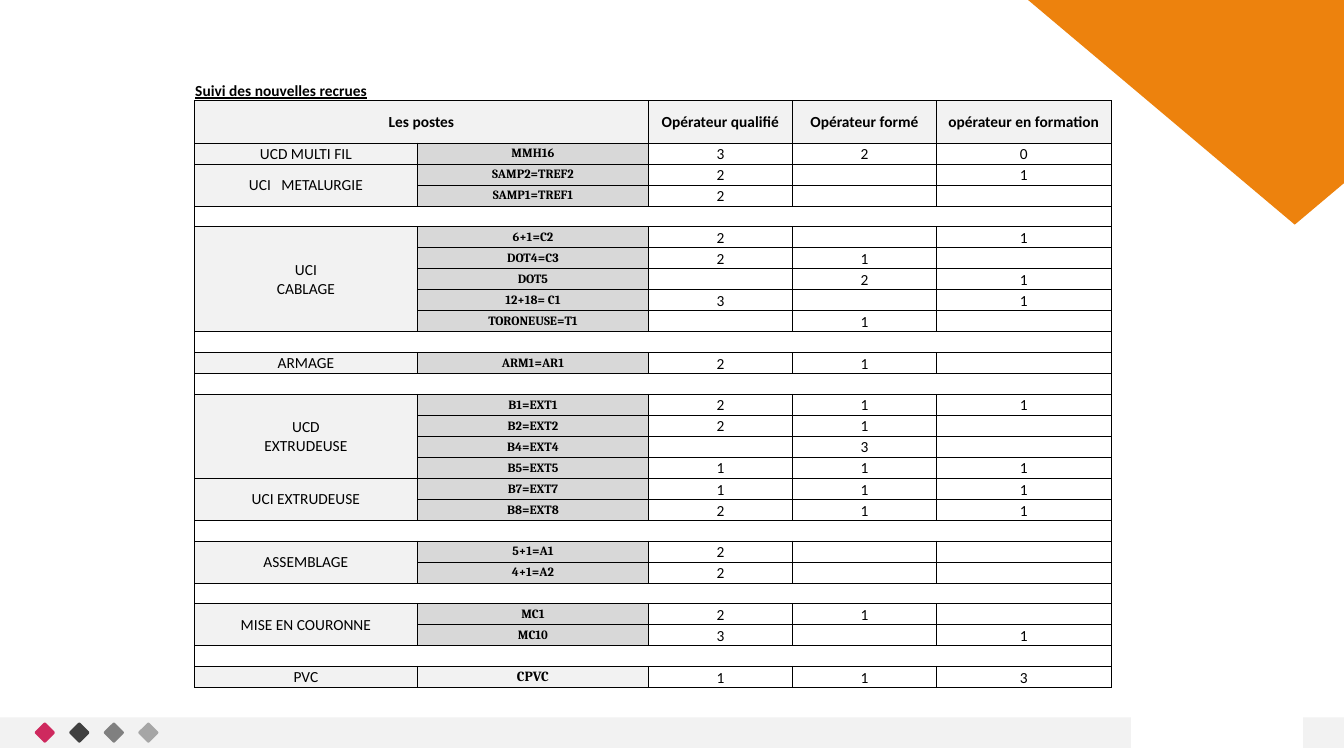
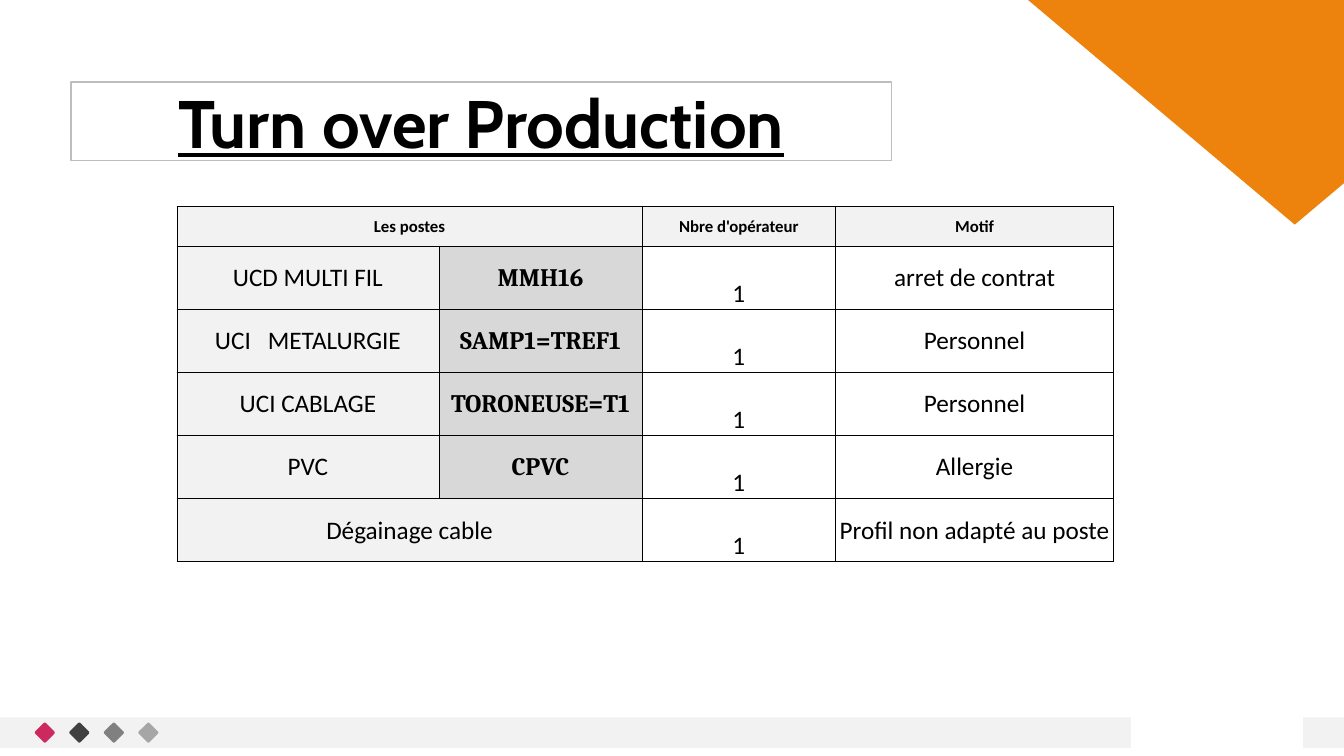
from dataclasses import dataclass, replace

from lxml import etree
from pptx import Presentation
from pptx.dml.color import RGBColor
from pptx.enum.shapes import MSO_SHAPE
from pptx.enum.text import MSO_ANCHOR, MSO_AUTO_SIZE, PP_ALIGN
from pptx.oxml.ns import qn
from pptx.util import Cm, Pt

RECTANGLE, ROUNDED, DIAMOND = MSO_SHAPE.RECTANGLE, MSO_SHAPE.ROUNDED_RECTANGLE, MSO_SHAPE.DIAMOND
LEFT, CENTER = PP_ALIGN.LEFT, PP_ALIGN.CENTER
MIDDLE, BOTTOM = MSO_ANCHOR.MIDDLE, MSO_ANCHOR.BOTTOM
NO_STYLE_NO_GRID = "{2D5ABB26-0587-4C30-8999-92F81FD0307C}"

RECRUITS_TITLE = "Suivi des nouvelles recrues"
RECRUITS_HEADER = ["Opérateur qualifié", "Opérateur formé", "opérateur en formation"]
POSTS_LABEL = "Les postes"
RECRUIT_BLOCKS = [
    [("UCD MULTI FIL", [("MMH16", "3", "2", "0")]),
     ("UCI   METALURGIE", [("SAMP2=TREF2", "2", "", "1"), ("SAMP1=TREF1", "2", "", "")])],
    [("UCI\nCABLAGE", [("6+1=C2", "2", "", "1"), ("DOT4=C3", "2", "1", ""),
                       ("DOT5", "", "2", "1"), ("12+18= C1", "3", "", "1"),
                       ("TORONEUSE=T1", "", "1", "")])],
    [("ARMAGE", [("ARM1=AR1", "2", "1", "")])],
    [("UCD\nEXTRUDEUSE", [("B1=EXT1", "2", "1", "1"), ("B2=EXT2", "2", "1", ""),
                          ("B4=EXT4", "", "3", ""), ("B5=EXT5", "1", "1", "1")]),
     ("UCI EXTRUDEUSE", [("B7=EXT7", "1", "1", "1"), ("B8=EXT8", "2", "1", "1")])],
    [("ASSEMBLAGE", [("5+1=A1", "2", "", ""), ("4+1=A2", "2", "", "")])],
    [("MISE EN COURONNE", [("MC1", "2", "1", ""), ("MC10", "3", "", "1")])],
    [("PVC", [("CPVC", "1", "1", "3")])],
]
LIGHT_POST = "CPVC"

TURNOVER_TITLE = "Turn over Production"
TURNOVER_HEADER = [POSTS_LABEL, "", "Nbre d'opérateur", "Motif"]
DEPARTURES = [
    ("UCD MULTI FIL", "MMH16", "1", "arret de contrat"),
    ("UCI   METALURGIE", "SAMP1=TREF1", "1", "Personnel"),
    ("UCI CABLAGE", "TORONEUSE=T1", "1", "Personnel"),
    ("PVC", "CPVC", "1", "Allergie"),
    ("Dégainage cable", "", "1", "Profil non adapté au poste"),
]


@dataclass(frozen=True)
class Theme:
    text: str = "000000"
    accent: str = "ED820D"
    band: str = "F2F2F2"
    post: str = "D8D8D8"
    frame: str = "BDBDBD"
    markers: tuple = ("CE295E", "404040", "808080", "A6A6A6")
    title_font: str = "Cabin"
    body_font: str = "Calibri"
    post_font: str = "Cambria"
    title_size: int = 48
    header_size: int = 12
    large_size: int = 18
    body_size: int = 11
    light_post_size: int = 10
    post_size: int = 9
    border_width: float = 0.5


THEME = Theme()


@dataclass(frozen=True)
class CellStyle:
    fill: str = ""
    font: str = THEME.body_font
    size: int = THEME.body_size
    bold: bool = False
    underline: bool = False
    align: int = CENTER
    anchor: int = MIDDLE


CAPTION = CellStyle(bold=True, underline=True, align=LEFT, anchor=BOTTOM)
UNIT = CellStyle(fill=THEME.band)
HEADER = replace(UNIT, bold=True)
POST = CellStyle(fill=THEME.post, font=THEME.post_font, size=THEME.post_size, bold=True)
COUNT = CellStyle(anchor=BOTTOM)
REASON = CellStyle(size=THEME.large_size)


def rgb(value):
    return RGBColor.from_string(value)


def format_text(paragraph, font, size, bold, underline, align):
    paragraph.alignment = align
    paragraph.font.name = font
    paragraph.font.size = Pt(size)
    paragraph.font.bold = bold
    paragraph.font.underline = underline
    paragraph.font.color.rgb = rgb(THEME.text)


def add_solid(slide, kind, left, top, width, height, color):
    shape = slide.shapes.add_shape(kind, Cm(left), Cm(top), Cm(width), Cm(height))
    shape.shadow.inherit = False
    shape.fill.solid()
    shape.fill.fore_color.rgb = rgb(color)
    shape.line.fill.background()
    return shape


def add_decor(slide):
    for left, width in ((0, 28.5), (32.84, 1.03)):
        add_solid(slide, RECTANGLE, left, 18.08, width, 0.77, THEME.band)
    for index, color in enumerate(THEME.markers):
        marker = add_solid(slide, ROUNDED, 0.94 + 0.87 * index, 18.27, 0.38, 0.38, color)
        marker.adjustments[0] = 0.11
        marker.rotation = 315
    add_solid(slide, DIAMOND, 25.91, -5.66, 13.44, 11.32, THEME.accent)


def draw_borders(cell):
    properties = cell._tc.get_or_add_tcPr()
    for side in ("a:lnL", "a:lnR", "a:lnT", "a:lnB"):
        line = etree.SubElement(properties, qn(side), w=str(Pt(THEME.border_width)))
        solid = etree.SubElement(line, qn("a:solidFill"))
        etree.SubElement(solid, qn("a:srgbClr"), val=THEME.text)


def write_cell(cell, text, style):
    cell.margin_left = cell.margin_right = cell.margin_top = Cm(0.02)
    cell.margin_bottom = 0
    cell.vertical_anchor = style.anchor
    if style.fill:
        cell.fill.solid()
        cell.fill.fore_color.rgb = rgb(style.fill)
    else:
        cell.fill.background()
    paragraph = cell.text_frame.paragraphs[0]
    paragraph.text = text
    format_text(paragraph, style.font, style.size, style.bold, style.underline, style.align)
    if not text:
        etree.SubElement(paragraph._p, qn("a:endParaRPr"), sz=str(style.size * 100))


def add_grid(slide, left, top, widths, heights, rows, merges, open_rows=()):
    table = slide.shapes.add_table(
        len(rows), len(widths), Cm(left), Cm(top), Cm(sum(widths)), Cm(sum(heights))).table
    table.first_row = table.horz_banding = False
    table._tbl.tblPr.find(qn("a:tableStyleId")).text = NO_STYLE_NO_GRID
    for column, width in zip(table.columns, widths):
        column.width = Cm(width)
    for row_index, (height, row) in enumerate(zip(heights, rows)):
        table.rows[row_index].height = Cm(height)
        for column_index, (text, style) in enumerate(row):
            cell = table.cell(row_index, column_index)
            if row_index not in open_rows:
                draw_borders(cell)
            write_cell(cell, text, style)
    for first, last in merges:
        table.cell(*first).merge(table.cell(*last))


def build_recruits(slide):
    line_height, spacer_height, header_height = 0.53, 0.52, 1.06
    rows = [
        [(RECRUITS_TITLE, CAPTION)] + [("", COUNT)] * 4,
        [(label, HEADER) for label in [POSTS_LABEL, "", *RECRUITS_HEADER]],
    ]
    heights = [line_height, header_height]
    merges = [((0, 0), (0, 1)), ((1, 0), (1, 1))]
    light_post = replace(POST, fill=THEME.band, size=THEME.light_post_size)
    for block_index, block in enumerate(RECRUIT_BLOCKS):
        if block_index:
            merges.append(((len(rows), 0), (len(rows), 4)))
            rows.append([("", COUNT)] * 5)
            heights.append(spacer_height)
        for unit, posts in block:
            first = len(rows)
            for index, (post, *counts) in enumerate(posts):
                post_style = light_post if post == LIGHT_POST else POST
                rows.append([("" if index else unit, UNIT), (post, post_style)]
                            + [(count, COUNT) for count in counts])
                heights.append(line_height)
            if len(posts) > 1:
                merges.append(((first, 0), (len(rows) - 1, 0)))
    add_grid(slide, 4.9, 2.01, [5.62, 5.82, 3.63, 3.63, 4.4], heights, rows, merges, open_rows=(0,))


def build_turnover(slide):
    title = slide.shapes.title
    title.left, title.top, title.width, title.height = Cm(1.79), Cm(2.07), Cm(20.67), Cm(1.98)
    title.line.color.rgb = rgb(THEME.frame)
    title.line.width = Pt(1)
    frame = title.text_frame
    frame.text = TURNOVER_TITLE
    frame.word_wrap = True
    frame.auto_size = MSO_AUTO_SIZE.NONE
    frame.vertical_anchor = MIDDLE
    format_text(frame.paragraphs[0], THEME.title_font, THEME.title_size, True, True, CENTER)

    header = replace(HEADER, size=THEME.header_size)
    styles = [replace(style, size=THEME.large_size) for style in (UNIT, POST, COUNT, REASON)]
    rows = [[(label, header) for label in TURNOVER_HEADER]]
    rows += [list(zip(departure, styles)) for departure in DEPARTURES]
    merges = [((index, 0), (index, 1)) for index, row in enumerate(rows) if not row[1][0]]
    heights = [0.99] + [1.59] * len(DEPARTURES)
    add_grid(slide, 4.46, 5.21, [6.6, 5.12, 4.88, 7], heights, rows, merges)


def main():
    prs = Presentation()
    prs.slide_width, prs.slide_height = Cm(33.87), Cm(19.05)
    title_only, blank = prs.slide_layouts[5], prs.slide_layouts[6]
    for layout, build in ((blank, build_recruits), (title_only, build_turnover)):
        slide = prs.slides.add_slide(layout)
        add_decor(slide)
        build(slide)
    prs.save("out.pptx")


if __name__ == "__main__":
    main()
